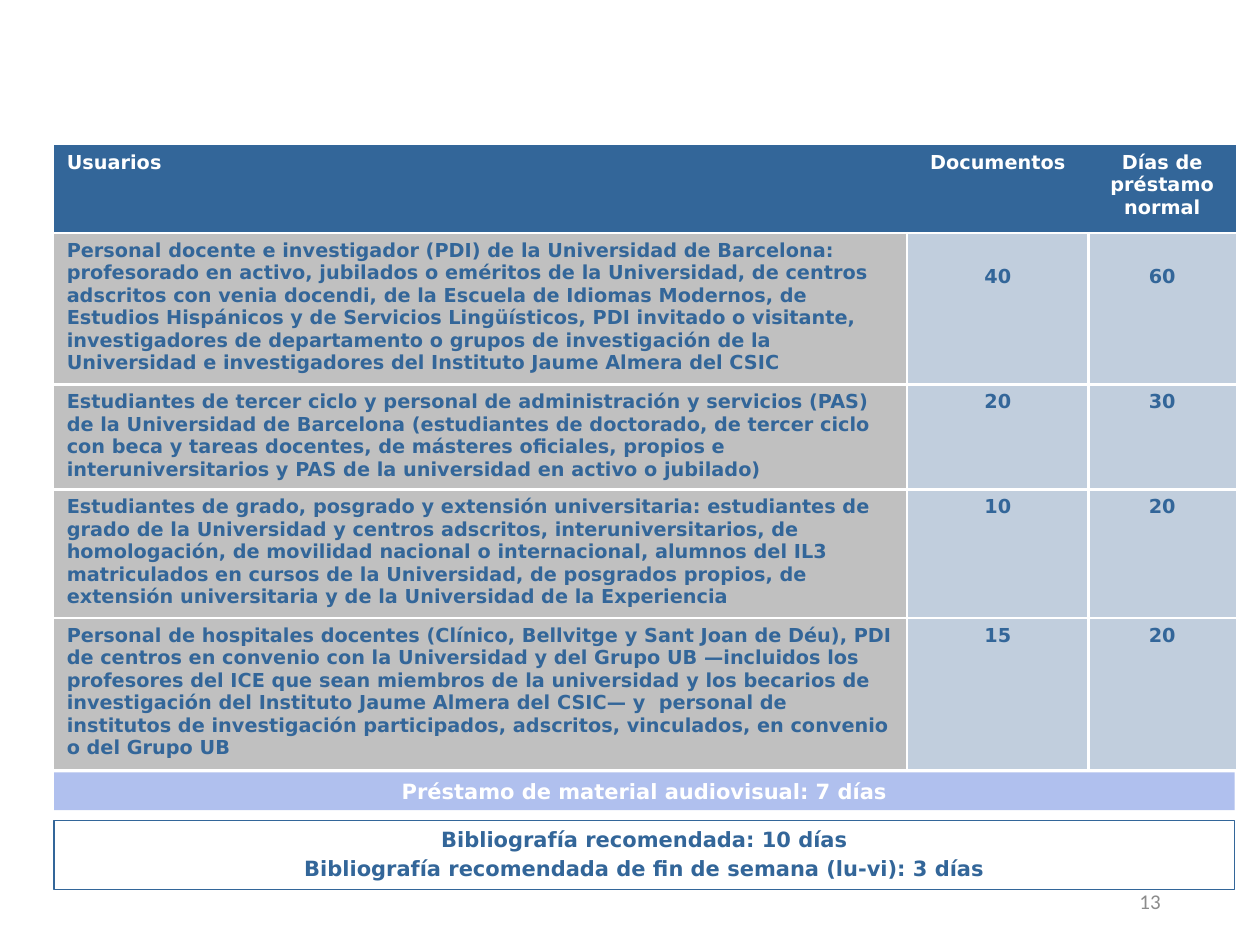
from lxml import etree
from pptx import Presentation
from pptx.dml.color import RGBColor
from pptx.enum.shapes import MSO_SHAPE
from pptx.enum.text import MSO_ANCHOR, PP_ALIGN
from pptx.oxml.ns import qn
from pptx.util import Inches, Pt

RECT = MSO_SHAPE.RECTANGLE
TOP, MIDDLE = MSO_ANCHOR.TOP, MSO_ANCHOR.MIDDLE
LEFT, CENTER, RIGHT = PP_ALIGN.LEFT, PP_ALIGN.CENTER, PP_ALIGN.RIGHT

COLORS = {"blue": "336699", "gray": "C0C0C0", "pale": "C1CEDD",
          "band": "B0C0EE", "white": "FFFFFF", "number": "8C8C8C"}
FONT = "DejaVu Sans"
NO_STYLE = "{2D5ABB26-0587-4C30-8999-92F81FD0307C}"

# Shared left edge and width, and the table grid, in inches
X, WIDTH = 0.43, 9.37
TABLE_Y = 1.15
COL_WIDTHS = [6.77, 1.44, 1.17]
ROW_HEIGHTS = [0.7, 1.2, 0.83, 1.02, 1.2]

ROWS = [
    ("Usuarios", "Documentos", "Días de préstamo normal"),
    ("Personal docente e investigador (PDI) de la Universidad de Barcelona: "
     "profesorado en activo, jubilados o eméritos de la Universidad, de centros "
     "adscritos con venia docendi, de la Escuela de Idiomas Modernos, de Estudios "
     "Hispánicos y de Servicios Lingüísticos, PDI invitado o visitante, "
     "investigadores de departamento o grupos de investigación de la Universidad "
     "e investigadores del Instituto Jaume Almera del CSIC", "40", "60"),
    ("Estudiantes de tercer ciclo y personal de administración y servicios (PAS) "
     "de la Universidad de Barcelona (estudiantes de doctorado, de tercer ciclo "
     "con beca y tareas docentes, de másteres oficiales, propios e "
     "interuniversitarios y PAS de la universidad en activo o jubilado)", "20", "30"),
    ("Estudiantes de grado, posgrado y extensión universitaria: estudiantes de "
     "grado de la Universidad y centros adscritos, interuniversitarios, de "
     "homologación, de movilidad nacional o internacional, alumnos del IL3 "
     "matriculados en cursos de la Universidad, de posgrados propios, de extensión "
     "universitaria y de la Universidad de la Experiencia", "10", "20"),
    ("Personal de hospitales docentes (Clínico, Bellvitge y Sant Joan de Déu), PDI "
     "de centros en convenio con la Universidad y del Grupo UB —incluidos los "
     "profesores del ICE que sean miembros de la universidad y los becarios de "
     "investigación del Instituto Jaume Almera del CSIC— y  personal de institutos "
     "de investigación participados, adscritos, vinculados, en convenio o del "
     "Grupo UB", "15", "20"),
]


def rgb(name):
    return RGBColor.from_string(COLORS[name])


def write(tf, text, size, color, align, font=FONT, bold=True):
    tf.text = text
    for i, p in enumerate(tf.paragraphs):
        p.alignment = align
        if i:
            p.space_before = Pt(0.2 * size)
        for r in p.runs:
            r.font.name, r.font.size, r.font.bold = font, Pt(size), bold
            r.font.color.rgb = rgb(color)


def add_number(slide, text):
    s = slide.shapes.add_textbox(Inches(7.06), Inches(6.95), Inches(2.25), Inches(0.4))
    s.text_frame.word_wrap = True
    s.text_frame.vertical_anchor = MIDDLE
    write(s.text_frame, text, 12, "number", RIGHT, "Calibri", False)


def add_box(slide, y, height, text, color, fill=None, line=None):
    s = slide.shapes.add_shape(RECT, Inches(X), Inches(y), Inches(WIDTH), Inches(height))
    s.shadow.inherit = False
    if fill:
        s.fill.solid()
        s.fill.fore_color.rgb = rgb(fill)
    else:
        s.fill.background()
    if line:
        s.line.color.rgb = rgb(line)
        s.line.width = Pt(0.75)
    else:
        s.line.fill.background()
    s.text_frame.vertical_anchor = TOP
    write(s.text_frame, text, 12, color, CENTER)


def set_borders(cell, sides):
    """Draw white lines on the given sides, in the order L, R, T, B."""
    tc_pr = cell._tc.get_or_add_tcPr()
    for side in sides:
        ln = etree.SubElement(tc_pr, qn(f"a:ln{side}"), w=str(Pt(1.5)))
        fill = etree.SubElement(ln, qn("a:solidFill"))
        etree.SubElement(fill, qn("a:srgbClr"), val=COLORS["white"])


def add_loan_table(slide):
    n_rows, n_cols = len(ROWS), len(COL_WIDTHS)
    table = slide.shapes.add_table(
        n_rows, n_cols, Inches(X), Inches(TABLE_Y),
        Inches(sum(COL_WIDTHS)), Inches(sum(ROW_HEIGHTS))).table
    table.horz_banding = False
    table._tbl.tblPr.find(qn("a:tableStyleId")).text = NO_STYLE
    for col, width in zip(table.columns, COL_WIDTHS):
        col.width = Inches(width)
    for row, height in zip(table.rows, ROW_HEIGHTS):
        row.height = Inches(height)

    for i, texts in enumerate(ROWS):
        for j, text in enumerate(texts):
            cell = table.cell(i, j)
            # Lines only between cells, with no verticals in the header
            shown = {"L": i and j, "R": i and j < n_cols - 1,
                     "T": i, "B": i < n_rows - 1}
            set_borders(cell, [side for side in shown if shown[side]])
            cell.fill.solid()
            cell.fill.fore_color.rgb = rgb("blue" if i == 0 else "pale" if j else "gray")
            write(cell.text_frame, text, 11, "blue" if i else "white",
                  CENTER if j else LEFT)
    # The first pair of figures sits one line lower
    for j in range(1, n_cols):
        table.cell(1, j).margin_top = Inches(0.26)


def main():
    prs = Presentation()
    prs.slide_width, prs.slide_height = Inches(10), Inches(7.5)
    slide = prs.slides.add_slide(prs.slide_layouts[6])
    add_number(slide, "13")
    add_box(slide, 6.51, 0.55,
            "Bibliografía recomendada: 10 días\n"
            "Bibliografía recomendada de fin de semana (lu-vi): 3 días",
            "blue", line="blue")
    add_loan_table(slide)
    add_box(slide, 6.13, 0.3, "Préstamo de material audiovisual: 7 días",
            "white", fill="band")
    prs.save("out.pptx")


if __name__ == "__main__":
    main()
